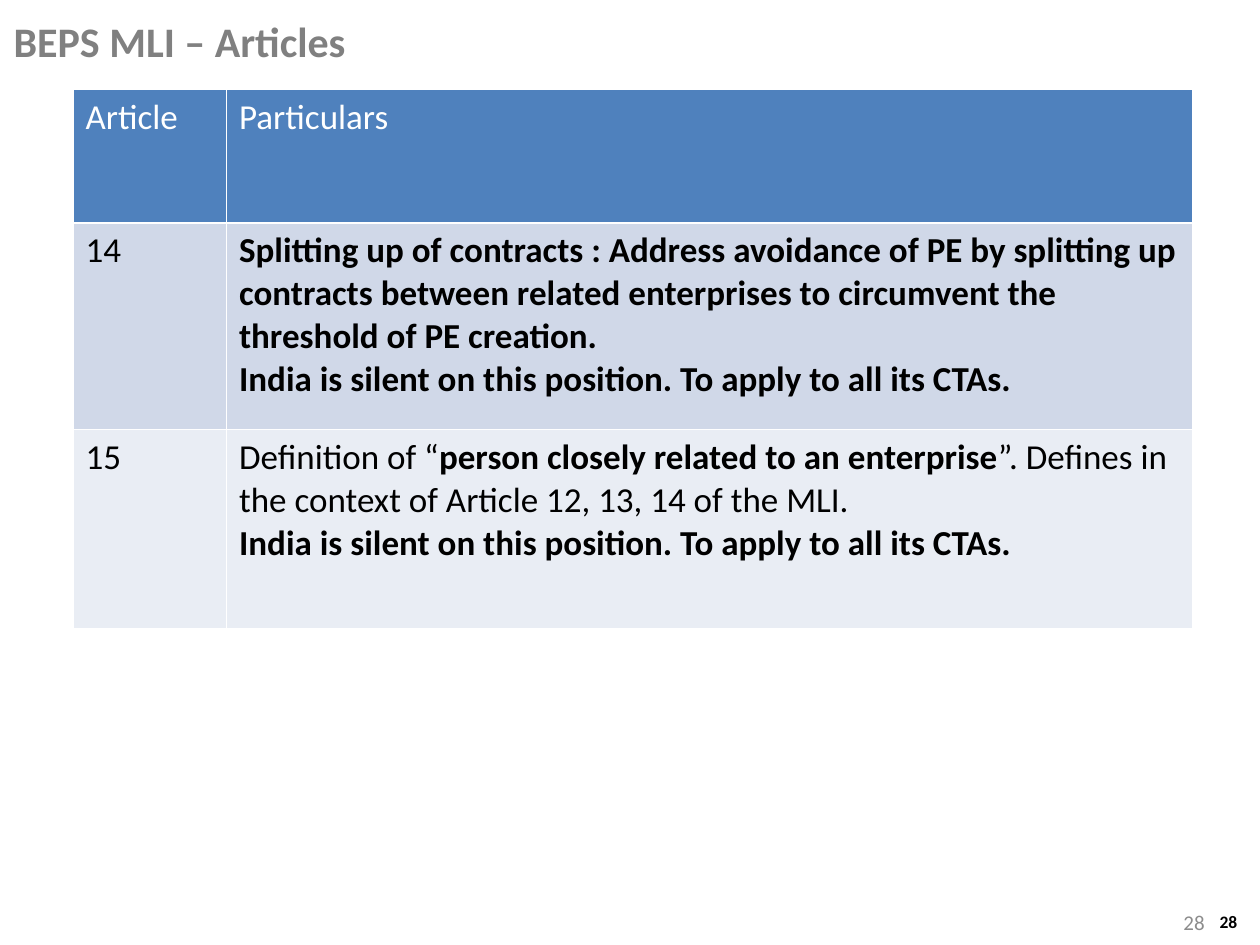
from pptx import Presentation
from pptx import util as u
from pptx.dml.color import RGBColor
from pptx.enum import text as t

COLORS = {
    "title": "808080", "number": "8C8C8C", "ink": "000000", "white": "FFFFFF",
    "header": "4F81BD", "band_dark": "D0D8E8", "band_light": "E9EDF4",
}
FONT = "Calibri"
WIDTH, HEIGHT = 10, 7.5


def write(frame, paragraphs, size=20, color="ink", bold=False,
          align=t.PP_ALIGN.LEFT, before=0):
    """Fill a frame; a paragraph is a list of runs, and *text* flips the weight."""
    frame.word_wrap = True
    for i, line in enumerate(paragraphs):
        paragraph = frame.paragraphs[0] if i == 0 else frame.add_paragraph()
        paragraph.alignment = align
        paragraph.space_before = u.Pt(before)
        for j, part in enumerate(line.split("*")):
            if not part:
                continue
            run = paragraph.add_run()
            run.text = part
            run.font.name = FONT
            run.font.size = u.Pt(size)
            run.font.bold = bold != (j % 2 == 1)
            run.font.color.rgb = RGBColor.from_string(COLORS[color])


class ArticleSlide:
    def __init__(self, deck):
        self.slide = deck.slides.add_slide(deck.slide_layouts[6])

    def place(self, x, y, w, h):
        """Turn shares of the slide's size into lengths."""
        return [u.Inches(round(share * full, 2))
                for share, full in zip((x, y, w, h), (WIDTH, HEIGHT) * 2)]

    def label(self, box, words, anchor=t.MSO_ANCHOR.MIDDLE, **style):
        frame = self.slide.shapes.add_textbox(*self.place(*box)).text_frame
        frame.vertical_anchor = anchor
        write(frame, [words], **style)

    def table(self, box, column_shares, row_shares, rows, fills):
        area = self.place(*box)
        grid = self.slide.shapes.add_table(len(rows), len(rows[0]), *area).table
        for column, share in zip(grid.columns, column_shares):
            column.width = int(area[2] * share)
        for row, share in zip(grid.rows, row_shares):
            row.height = int(area[3] * share)
        for r, (entries, fill) in enumerate(zip(rows, fills)):
            for c, paragraphs in enumerate(entries):
                cell = grid.cell(r, c)
                cell.fill.solid()
                cell.fill.fore_color.rgb = RGBColor.from_string(COLORS[fill])
                write(cell.text_frame, paragraphs,
                      color="white" if r == 0 else "ink")


def main():
    deck = Presentation()
    deck.slide_width, deck.slide_height = u.Inches(WIDTH), u.Inches(HEIGHT)
    page = ArticleSlide(deck)

    # Title
    page.label((0.001, 0.003, 0.999, 0.08), "BEPS MLI – Articles",
               size=24, color="title", bold=True)

    # Articles and their particulars
    position = "*India is silent on this position. To apply to all its CTAs.*"
    articles = [
        (["Article"], ["Particulars"]),
        (["14"], ["*Splitting up of contracts : Address avoidance of PE by "
                  "splitting up contracts between related enterprises to "
                  "circumvent the threshold of PE creation.*", position]),
        (["15"], ["Definition of “*person closely related to an enterprise*”. "
                  "Defines in the context of Article 12, 13, 14 of the MLI.",
                  position]),
    ]
    page.table((0.058, 0.095, 0.889, 0.571), (0.137, 0.863),
               (0.248, 0.383, 0.369), articles,
               ("header", "band_dark", "band_light"))

    # Page numbers
    page.label((0.733, 0.949, 0.233, 0.053), "28", size=12, color="number",
               align=t.PP_ALIGN.RIGHT)
    page.label((0.948, 0.957, 0.054, 0.044), "28", anchor=t.MSO_ANCHOR.TOP,
               size=10, bold=True, align=t.PP_ALIGN.CENTER, before=5)

    deck.save("out.pptx")


if __name__ == "__main__":
    main()
